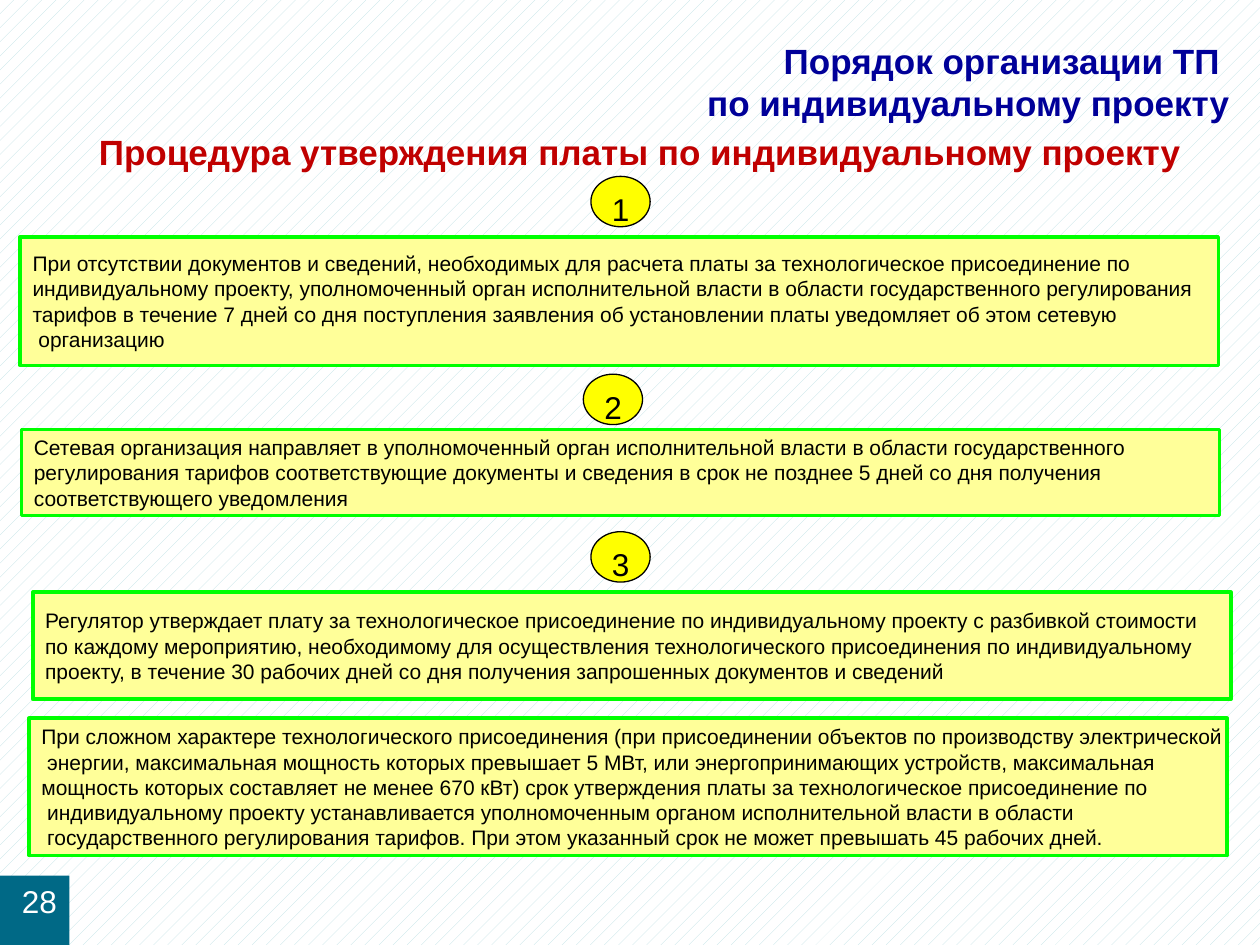
from pptx import Presentation
from pptx.dml.color import RGBColor
from pptx.enum.dml import MSO_PATTERN
from pptx.enum.shapes import MSO_SHAPE as Preset
from pptx.enum.text import MSO_ANCHOR as Anchor, MSO_AUTO_SIZE as AutoSize, PP_ALIGN as Align
from pptx.util import Inches, Pt

COLUMNS, ROWS = 100, 75
SLIDE_WIDTH, SLIDE_HEIGHT = Inches(10), Inches(7.5)
BOX_WIDTH = 95.1
BADGE_SIZE = (4.7, 4)

STEPS = [
    ((1.6, 18.8, BOX_WIDTH, 10.2), [
        "При отсутствии документов и сведений, необходимых для расчета платы за технологическое присоединение по",
        "индивидуальному проекту, уполномоченный орган исполнительной власти в области государственного регулирования",
        "тарифов в течение 7 дней со дня поступления заявления об установлении платы уведомляет об этом сетевую",
        " организацию",
    ]),
    ((1.7, 34.1, BOX_WIDTH, 6.8), [
        "Сетевая организация направляет в уполномоченный орган исполнительной власти в области государственного",
        "регулирования тарифов соответствующие документы и сведения в срок не позднее 5 дней со дня получения",
        "соответствующего уведомления",
    ]),
    ((2.6, 47, BOX_WIDTH, 8.5), [
        "Регулятор утверждает плату за технологическое присоединение по индивидуальному проекту с разбивкой стоимости",
        "по каждому мероприятию, необходимому для осуществления технологического присоединения по индивидуальному",
        "проекту, в течение 30 рабочих дней со дня получения запрошенных документов и сведений",
    ]),
    ((2.3, 57, BOX_WIDTH, 10.9), [
        "При сложном характере технологического присоединения (при присоединении объектов по производству электрической",
        " энергии, максимальная мощность которых превышает 5 МВт, или энергопринимающих устройств, максимальная",
        "мощность которых составляет не менее 670 кВт) срок утверждения платы за технологическое присоединение по",
        " индивидуальному проекту устанавливается уполномоченным органом исполнительной власти в области",
        " государственного регулирования тарифов. При этом указанный срок не может превышать 45 рабочих дней.",
    ]),
]
BADGES = [(46.9, 14), (46.3, 29.7), (46.9, 42.2)]


def color(value):
    """Turn a hex string into a colour."""
    return RGBColor.from_string(value)


def place(column, row, columns, rows):
    """Turn grid units into left, top, width and height."""
    across, down = SLIDE_WIDTH / COLUMNS, SLIDE_HEIGHT / ROWS
    return [round(length) for length in (column * across, row * down, columns * across, rows * down)]


def apply(target, values):
    """Set each named attribute of the target."""
    for name, value in values.items():
        setattr(target, name, value)


def write(shape, lines, size, ink, align, frame, bold=False):
    """Fill a shape with one formatted paragraph per line."""
    text_frame = shape.text_frame
    text_frame.text = "\n".join(lines)
    apply(text_frame, frame)
    for paragraph in text_frame.paragraphs:
        paragraph.alignment = align
        apply(paragraph.font, {"name": "Arial", "size": Pt(size), "bold": bold})
        paragraph.font.color.rgb = color(ink)


def add_block(slide, preset, cell, fill, line=None, width=0):
    """Add a filled preset shape with an optional outline."""
    shape = slide.shapes.add_shape(preset, *place(*cell))
    shape.shadow.inherit = False
    shape.fill.solid()
    shape.fill.fore_color.rgb = color(fill)
    if line:
        shape.line.color.rgb = color(line)
        shape.line.width = Pt(width)
    else:
        shape.line.fill.background()
    return shape


def add_headings(slide):
    """Format the title placeholder and add the red heading below it."""
    title = slide.shapes.title
    apply(title, dict(zip(("left", "top", "width", "height"), place(15, 3.1, 82.6, 6.7))))
    margins = dict.fromkeys(("margin_left", "margin_top", "margin_right", "margin_bottom"), 0)
    frame = {"vertical_anchor": Anchor.MIDDLE, "word_wrap": True, "auto_size": AutoSize.NONE}
    write(title, ["Порядок организации ТП \vпо индивидуальному проекту"], 20, "000099",
          Align.RIGHT, frame | margins, True)
    heading = slide.shapes.add_textbox(*place(0.8, 9.4, 100, 4.8))
    write(heading, ["Процедура утверждения платы по индивидуальному проекту"], 20, "C00000",
          Align.CENTER, {"vertical_anchor": Anchor.BOTTOM, "word_wrap": True}, True)


def add_step(slide, cell, lines):
    """Add a yellow box with the text of one step."""
    box = add_block(slide, Preset.RECTANGLE, cell, "FFFF99", "00FF00", 2)
    write(box, lines, 12, "000000", Align.LEFT, {"vertical_anchor": Anchor.MIDDLE, "word_wrap": False})


def add_badge(slide, corner, number):
    """Add a numbered yellow ellipse."""
    badge = add_block(slide, Preset.OVAL, (*corner, *BADGE_SIZE), "FFFF00", "000000", 0.75)
    write(badge, [str(number)], 18, "000000", Align.CENTER, {"vertical_anchor": Anchor.TOP, "word_wrap": True})


def add_page_number(slide, number):
    """Add the page number tile in the lower left corner."""
    tile = add_block(slide, Preset.RECTANGLE, (0, 69.5, 5.5, 5.5), "006986")
    write(tile, [str(number)], 18, "FFFFFF", Align.RIGHT, {"vertical_anchor": Anchor.TOP, "word_wrap": True})


def set_background(slide):
    """Give the slide its pale patterned background."""
    fill = slide.background.fill
    fill.patterned()
    fill.pattern = MSO_PATTERN.PERCENT_10
    fill.fore_color.rgb = color("BBE0E3")
    fill.back_color.rgb = color("FFFFFF")


def main():
    """Build the slide and save it."""
    presentation = Presentation()
    apply(presentation, {"slide_width": SLIDE_WIDTH, "slide_height": SLIDE_HEIGHT})
    slide = presentation.slides.add_slide(presentation.slide_layouts.get_by_name("Title Only"))
    set_background(slide)
    add_headings(slide)
    for cell, lines in STEPS:
        add_step(slide, cell, lines)
    for number, corner in enumerate(BADGES, 1):
        add_badge(slide, corner, number)
    add_page_number(slide, 28)
    presentation.save("out.pptx")


if __name__ == "__main__":
    main()
